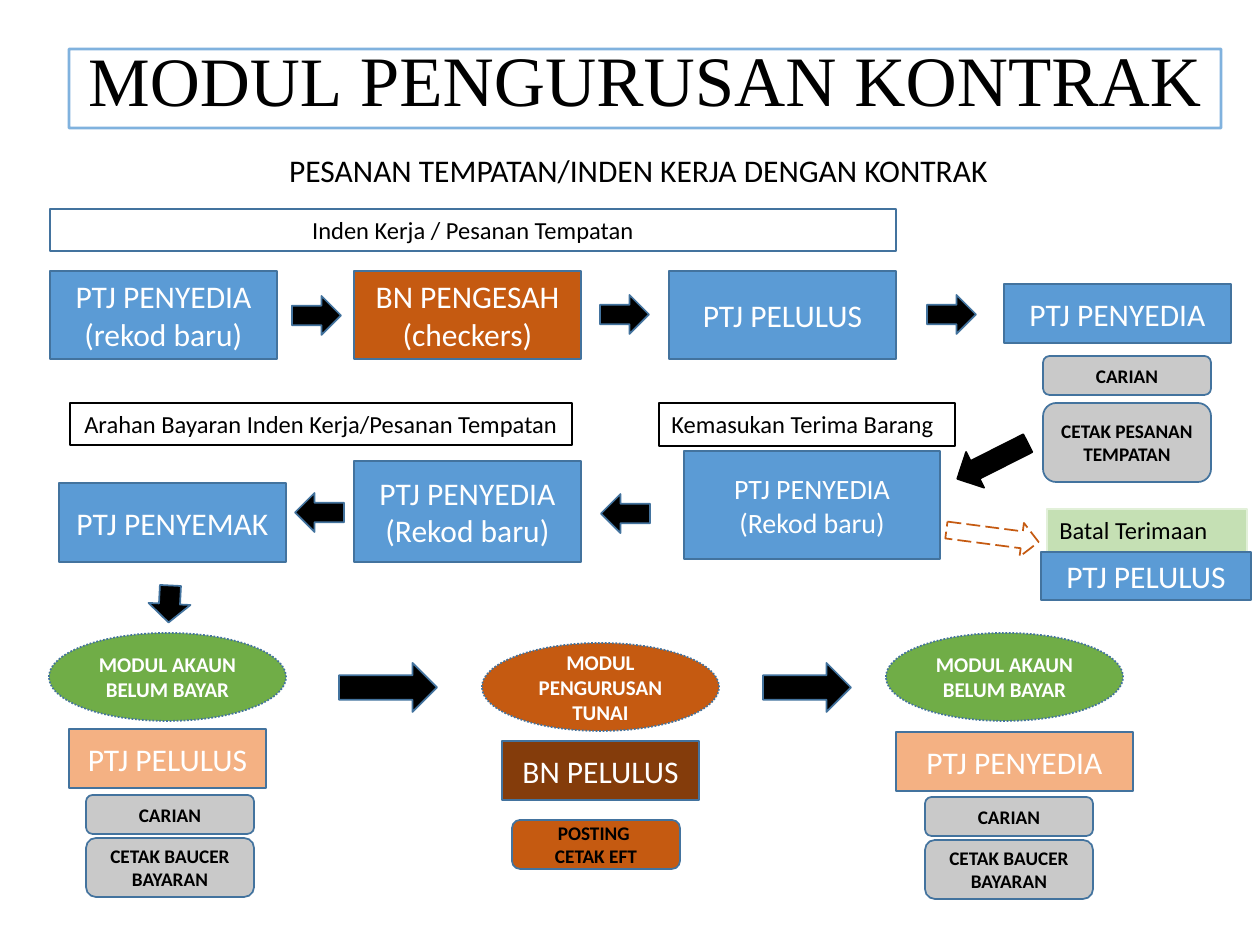
from lxml.etree import SubElement
from pptx import Presentation
from pptx.dml.color import RGBColor
from pptx.enum.dml import MSO_LINE
from pptx.enum.shapes import MSO_SHAPE
from pptx.enum.text import MSO_ANCHOR, PP_ALIGN
from pptx.oxml.ns import qn
from pptx.util import Pt

PX = 914400 / 126
BLUE, ORANGE, PEACH, BROWN = "5B9BD5", "C55A11", "F4B183", "843C0B"
GREEN, GREY, EDGE = "70AD47", "C9C9C9", "43739E"
BLACK, WHITE = "000000", "FFFFFF"


def px(n):
    return round(n * PX)


def rgb(value):
    return RGBColor.from_string(value)


def add_shape(slide, kind, box, fill, line=EDGE, width=1, dash=None):
    s = slide.shapes.add_shape(kind, *map(px, box))
    s.shadow.inherit = False
    if fill:
        s.fill.solid()
        s.fill.fore_color.rgb = rgb(fill)
    else:
        s.fill.background()
    s.line.color.rgb = rgb(line)
    s.line.width = Pt(width)
    if dash:
        s.line.dash_style = dash
    return s


def set_text(s, text, size, color, bold=False, align=PP_ALIGN.CENTER,
             anchor=MSO_ANCHOR.MIDDLE):
    tf = s.text_frame
    tf.word_wrap = True
    tf.vertical_anchor = anchor
    tf.text = text
    for p in tf.paragraphs:
        p.alignment = align
        for r in p.runs:
            r.font.name = "Calibri"
            r.font.size = Pt(size)
            r.font.bold = bold
            r.font.color.rgb = rgb(color)


def add_title(slide):
    s = add_shape(slide, MSO_SHAPE.RECTANGLE, (69, 49, 1152, 79), None, BLUE, 1.5)
    color = s.line.fill._xPr.find(".//" + qn("a:srgbClr"))
    SubElement(color, qn("a:alpha"), val="76000")
    tf = s.text_frame
    tf.word_wrap = True
    tf.vertical_anchor = MSO_ANCHOR.BOTTOM
    p = tf.paragraphs[0]
    p.alignment = PP_ALIGN.CENTER
    p.line_spacing = 0.9
    for text, size in (("MODUL", 39.6), (" PENGURUSAN KONTRAK", 40.5)):
        r = p.add_run()
        r.text = text
        r.font.name = "Times New Roman"
        r.font.size = Pt(size)
        r.font.color.rgb = rgb(BLACK)


def add_subtitle(slide):
    s = slide.shapes.add_textbox(*map(px, (231, 145, 815, 50)))
    set_text(s, "PESANAN TEMPATAN/INDEN KERJA DENGAN KONTRAK", 18, BLACK,
             anchor=MSO_ANCHOR.TOP)


def add_label(slide, box, text, fill, line, width=1, align=PP_ALIGN.CENTER):
    s = add_shape(slide, MSO_SHAPE.RECTANGLE, box, fill, line, width)
    set_text(s, text, 14, BLACK, align=align, anchor=MSO_ANCHOR.TOP)


def add_step(slide, box, text, fill=BLUE, size=18):
    s = add_shape(slide, MSO_SHAPE.RECTANGLE, box, fill)
    set_text(s, text, size, WHITE)


def add_module(slide, x, y, text, fill):
    s = add_shape(slide, MSO_SHAPE.OVAL, (x, y, 237, 88), fill,
                  dash=MSO_LINE.ROUND_DOT)
    set_text(s, text, 12, WHITE, bold=True)


def add_action(slide, x, y, height, text, fill=GREY):
    s = add_shape(slide, MSO_SHAPE.ROUNDED_RECTANGLE, (x, y, 168, height), fill)
    set_text(s, text, 11, BLACK, bold=True)


def add_arrow(slide, box, rotation=0, fill=BLACK, line=EDGE, dash=None):
    s = add_shape(slide, MSO_SHAPE.RIGHT_ARROW, box, fill, line, dash=dash)
    s.rotation = rotation


def main():
    prs = Presentation()
    prs.slide_width, prs.slide_height = px(1260), px(945)
    slide = prs.slides.add_slide(prs.slide_layouts[6])

    add_title(slide)
    add_subtitle(slide)

    # Section labels
    add_label(slide, (50, 209, 846, 42), "Inden Kerja / Pesanan Tempatan",
              None, EDGE, 0.75)
    add_label(slide, (70, 403, 502, 42),
              "Arahan Bayaran Inden Kerja/Pesanan Tempatan", WHITE, BLACK)
    add_label(slide, (659, 403, 296, 43), "Kemasukan Terima Barang",
              WHITE, BLACK, align=PP_ALIGN.LEFT)
    add_label(slide, (1047, 509, 200, 43), "Batal Terimaan",
              "C5E0B4", "E2F0D9", 0.75, PP_ALIGN.LEFT)

    # Order row, goods and payment row, then the steps under the modules
    for box, text, *style in (
        ((50, 271, 227, 88), "PTJ PENYEDIA\n(rekod baru)"),
        ((354, 271, 227, 88), "BN PENGESAH\n(checkers)", ORANGE),
        ((669, 271, 227, 88), "PTJ PELULUS"),
        ((1004, 284, 227, 59), "PTJ PENYEDIA"),
        ((684, 451, 256, 108), "PTJ PENYEDIA\n(Rekod baru)", BLUE, 16),
        ((354, 461, 227, 101), "PTJ PENYEDIA\n(Rekod baru)"),
        ((59, 483, 227, 79), "PTJ PENYEMAK"),
        ((1041, 552, 210, 48), "PTJ PELULUS"),
        ((69, 729, 197, 59), "PTJ PELULUS", PEACH),
        ((502, 741, 197, 59), "BN PELULUS", BROWN),
        ((896, 732, 237, 59), "PTJ PENYEDIA", PEACH),
    ):
        add_step(slide, box, text, *style)

    # Modules
    add_module(slide, 49, 633, "MODUL AKAUN BELUM BAYAR", GREEN)
    add_module(slide, 482, 643, "MODUL PENGURUSAN TUNAI", ORANGE)
    add_module(slide, 886, 633, "MODUL AKAUN BELUM BAYAR", GREEN)

    # Actions
    add_action(slide, 1043, 356, 39, "CARIAN")
    add_action(slide, 1043, 403, 79, "CETAK PESANAN TEMPATAN")
    for x, y in ((86, 795), (925, 797)):
        add_action(slide, x, y, 39, "CARIAN")
        add_action(slide, x, y + 43, 59, "CETAK BAUCER BAYARAN")
    add_action(slide, 512, 820, 49, "POSTING \nCETAK EFT", ORANGE)

    # Flow arrows
    for x, y, rotation in ((292, 296, 0), (600, 295, 0), (927, 295, 0),
                           (601, 494, 180), (295, 493, 180)):
        add_arrow(slide, (x, y, 49, 39), rotation)
    add_arrow(slide, (151, 583, 37, 42), 92.9)
    add_arrow(slide, (339, 663, 98, 49))
    add_arrow(slide, (763, 663, 88, 49))
    add_arrow(slide, (953, 441, 79, 40), 153.2, line=BLACK)
    add_arrow(slide, (946, 519, 93, 34), 7.4, None, ORANGE, MSO_LINE.LONG_DASH)

    prs.save("out.pptx")


if __name__ == "__main__":
    main()
